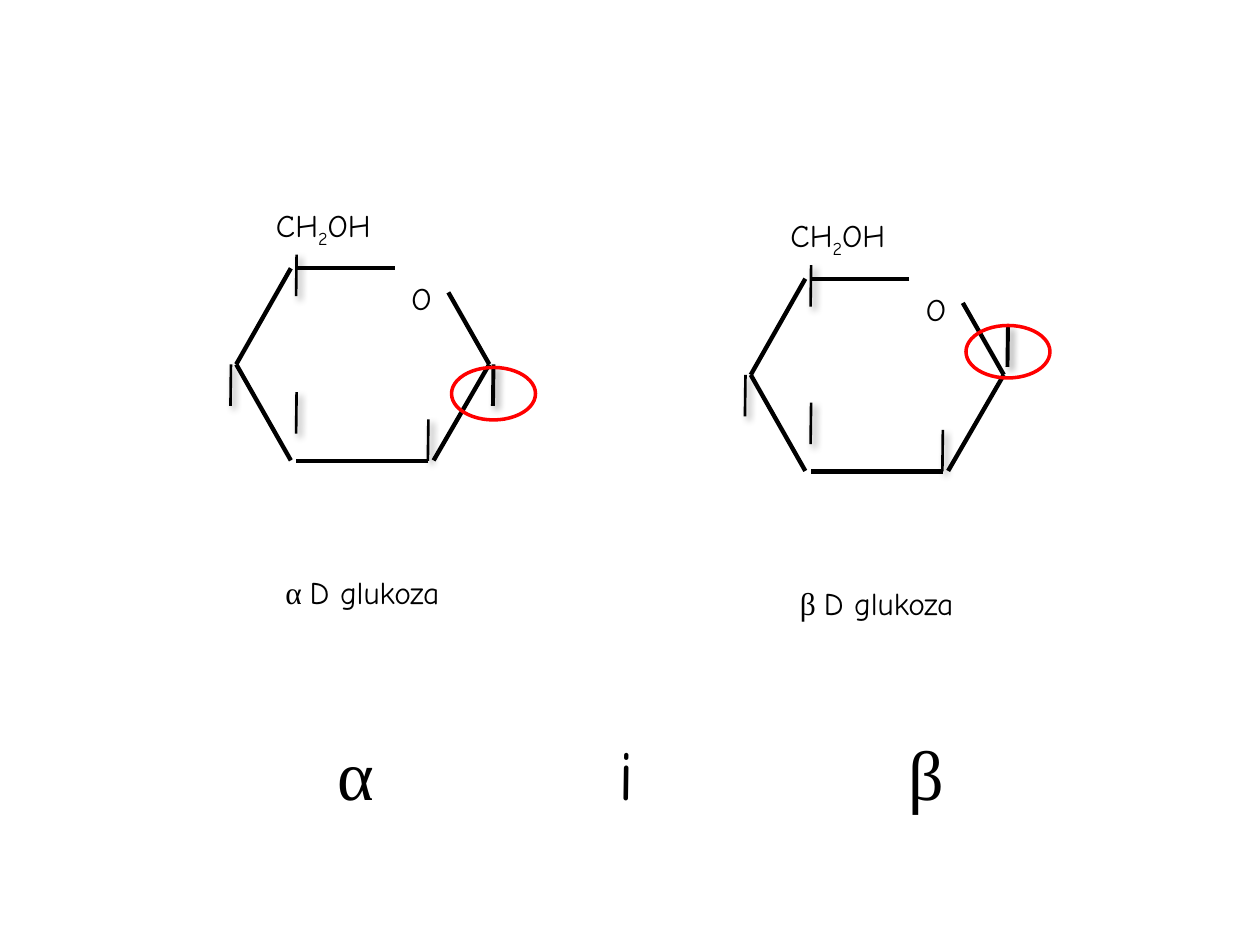
from dataclasses import dataclass
from typing import Any
from lxml import etree
from pptx import Presentation
from pptx.dml.color import RGBColor
from pptx.enum.shapes import MSO_CONNECTOR as CONN, MSO_SHAPE as SHAPE
from pptx.enum.text import MSO_AUTO_SIZE as FIT
from pptx.oxml.ns import qn
from pptx.util import Inches, Pt

BLACK = RGBColor(0, 0, 0)
RED = RGBColor(255, 0, 0)
LATIN, GREEK = "Comic Neue", "Times New Roman"
COLS = 120
TICK = 3.95

BONDS = [
    ((5.7, 24.85), (0.5, 15.7)),
    ((15.6, 6.55), (6.2, 6.55)),
    ((5.7, 6.55), (0.5, 15.7)),
    ((24.6, 15.7), (20.7, 8.85)),
    ((18.8, 24.9), (6.2, 24.9)),
    ((24.6, 15.7), (19.3, 24.85)),
]
TICKS = [(18.8, 20.95), (6.25, 18.35), (0, 15.7), (6.25, 5.25)]


@dataclass
class Canvas:
    prs: Any
    s: Any
    target: Any
    dx: float = 0
    dy: float = 0

    def size(self, n):
        return int(self.prs.slide_width * n / COLS)

    def at(self, x, y):
        return self.size(self.dx + x), self.size(self.dy + y)

    def group(self, dx, dy):
        shapes = self.s.shapes.add_group_shape().shapes
        return Canvas(self.prs, self.s, shapes, dx, dy)

    def line(self, start, end, weight, shadow=False):
        c = self.target.add_connector(CONN.STRAIGHT, *self.at(*start), *self.at(*end))
        c.line.color.rgb = BLACK
        c.line.width = Pt(weight)
        effects = etree.SubElement(c._element.spPr, qn("a:effectLst"))
        if shadow:
            outer = etree.SubElement(effects, qn("a:outerShdw"), blurRad=str(Pt(4)),
                                     dist=str(Pt(3)), dir="2700000", rotWithShape="0")
            color = etree.SubElement(outer, qn("a:srgbClr"), val=str(BLACK))
            etree.SubElement(color, qn("a:alpha"), val="40000")

    def tick(self, x, y, weight=1.5):
        self.line((x, y), (x - 0.05, y + TICK), weight, shadow=True)

    def text(self, x, y, w, h, runs, size=18, wrap=True, tabs=()):
        sp = self.target.add_textbox(*self.at(x, y), self.size(w), self.size(h))
        tf = sp.text_frame
        tf.word_wrap = wrap
        tf.auto_size = FIT.SHAPE_TO_FIT_TEXT
        p = tf.paragraphs[0]
        if tabs:
            stops = etree.SubElement(p._p.get_or_add_pPr(), qn("a:tabLst"))
            for stop in tabs:
                etree.SubElement(stops, qn("a:tab"), pos=str(self.size(stop)), algn="l")
        p.font.size = Pt(size)
        p.font.color.rgb = BLACK
        for words, face, baseline in runs:
            r = p.add_run()
            r.text = words
            r.font.name = face
            if baseline:
                r.font._element.set("baseline", str(baseline * 1000))

    def ring(self, anomer_y):
        self.tick(25, anomer_y, 2.25)
        self.text(16, 7, 7.6, 6.4, [("O", LATIN, 0)], wrap=False)
        for start, end in BONDS:
            self.line(start, end, 2.5)
        for x, y in TICKS:
            self.tick(x, y)
        formula = [("CH", LATIN, 0), ("2", LATIN, -25), ("OH", LATIN, 0)]
        self.text(3.1, 0, 12.6, 4.8, formula, wrap=False)

    def ellipse(self, x, y, w, h):
        sp = self.target.add_shape(SHAPE.OVAL, *self.at(x, y), self.size(w), self.size(h))
        sp.shadow.inherit = False
        sp.fill.background()
        sp.line.color.rgb = RED
        sp.line.width = Pt(2)


def main():
    prs = Presentation()
    prs.slide_width, prs.slide_height = Inches(10), Inches(7.5)
    s = prs.slides.add_slide(prs.slide_layouts[6])
    page = Canvas(prs, s, s.shapes)
    for letter, dx, dy, anomer_y, mark_y in (("α", 22, 19, 15.7, 16), ("β", 71, 20, 11, 11)):
        page.group(dx, dy).ring(anomer_y)
        caption = [(letter + " ", GREEK, 0), ("D glukoza", LATIN, 0)]
        page.text(dx + 4, dy + 35, 20, 4.8, caption)
        page.ellipse(dx + 21, dy + mark_y, 8, 5)
    footer = [("α\t", GREEK, 0), ("i\t", LATIN, 0), ("β", GREEK, 0)]
    page.text(31, 69, 68, 9.24, footer, size=40, tabs=(26.7, 54.3))
    prs.save("out.pptx")


if __name__ == "__main__":
    main()
